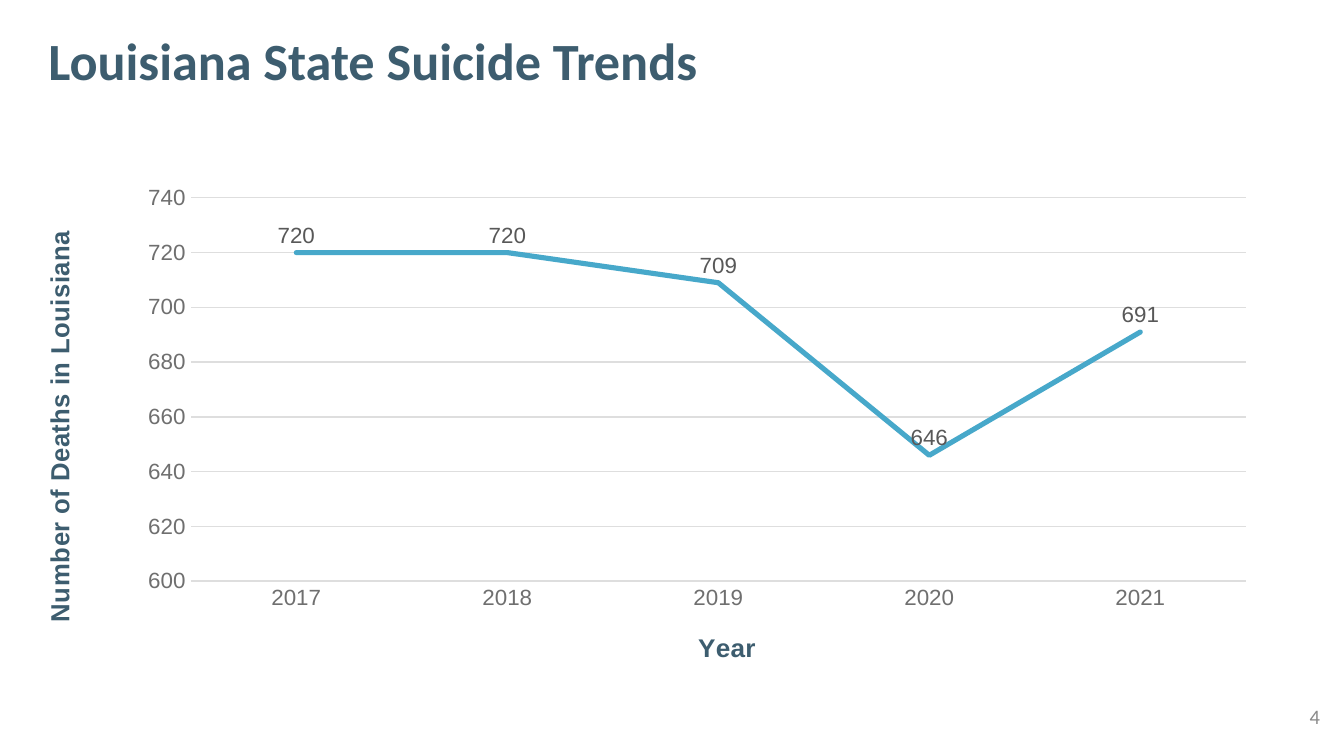
from dataclasses import dataclass

from lxml import etree
from pptx import Presentation, util as u
from pptx.chart.data import CategoryChartData
from pptx.dml.color import RGBColor
from pptx.enum import chart as ch, text as t
from pptx.oxml.ns import qn


@dataclass(frozen=True)
class Theme:
    heading: str = "3D5D6F"
    line: str = "47A8CA"
    axis: str = "6F6F6F"
    label: str = "585858"
    grid: str = "DEDEDE"
    number: str = "8A8A8A"
    base: str = "212121"
    title_font: str = "Calibri"
    chart_font: str = "Arial"
    title_size: float = 28
    axis_title_size: float = 14
    chart_size: float = 12
    base_size: float = 10
    number_size: float = 11


THEME = Theme()
DEATHS = {"2017": 720, "2018": 720, "2019": 709, "2020": 646, "2021": 691}


def assign(target, values):
    for name, value in values.items():
        setattr(target, name, value)


def style_font(font, name, size, color, bold=False):
    assign(font, {"name": name, "size": u.Pt(size), "bold": bold})
    font.color.rgb = RGBColor.from_string(color)


def style_line(line, color, width):
    line.color.rgb = RGBColor.from_string(color)
    line.width = u.Pt(width)


def set_layout(parent, position, box, **modes):
    """Lay out a chart part at x, y (and w, h) given in inches within the chart box."""
    for old in parent.findall(qn("c:layout")):
        parent.remove(old)
    layout = etree.Element(qn("c:layout"))
    manual = etree.SubElement(layout, qn("c:manualLayout"))
    parts, (width, height) = modes.pop("inches"), box[2:]
    fractions = {tag: length / whole for tag, length, whole
                 in zip("xywh", parts, (width, height) * 2)}
    for tag, value in {**modes, "xMode": "edge", "yMode": "edge", **fractions}.items():
        etree.SubElement(manual, qn(f"c:{tag}")).set("val", str(value))
    parent.insert(position, layout)


def place(shape, box):
    sides = ("left", "top", "width", "height")
    assign(shape, {side: u.Inches(length) for side, length in zip(sides, box)})


def add_title(slide, box, words):
    title = slide.shapes.title
    place(title, box)
    frame = title.text_frame
    assign(frame, {
        "text": words, "word_wrap": True,
        "auto_size": t.MSO_AUTO_SIZE.NONE,
        "vertical_anchor": t.MSO_ANCHOR.MIDDLE,
        "margin_left": u.Inches(0.36), "margin_right": u.Inches(0.1),
        "margin_top": u.Inches(0.1), "margin_bottom": u.Inches(0.1),
    })
    paragraph = frame.paragraphs[0]
    assign(paragraph, {"alignment": t.PP_ALIGN.LEFT, "line_spacing": 0.9})
    style_font(paragraph.runs[0].font, THEME.title_font, THEME.title_size,
               THEME.heading, True)


def style_axis(axis, words, box, title_corner):
    assign(axis, {"major_tick_mark": ch.XL_TICK_MARK.NONE,
                  "minor_tick_mark": ch.XL_TICK_MARK.NONE})
    style_font(axis.tick_labels.font, THEME.chart_font, THEME.chart_size, THEME.axis)
    title = axis.axis_title
    title.text_frame.text = words
    style_font(title.text_frame.paragraphs[0].runs[0].font, THEME.chart_font,
               THEME.axis_title_size, THEME.heading, True)
    set_layout(title._element, 1, box, inches=title_corner)


def add_trend_chart(slide, box):
    data = CategoryChartData()
    data.categories = list(DEATHS)
    data.add_series("Series 1", list(DEATHS.values()))
    chart = slide.shapes.add_chart(ch.XL_CHART_TYPE.LINE, *map(u.Inches, box), data).chart
    assign(chart, {"has_legend": False, "has_title": False})
    style_font(chart.font, THEME.chart_font, THEME.base_size, THEME.base)
    set_layout(chart._chartSpace.chart.plotArea, 0, box, layoutTarget="inner",
               inches=(1.15, 0.4, 7.85, 2.91))

    years, deaths = chart.category_axis, chart.value_axis
    style_axis(years, "Year", box, (4.89, 3.65))
    style_line(years.format.line, THEME.grid, 1)
    style_axis(deaths, "Number of Deaths in Louisiana", box, (0.01, 0.67))
    deaths.format.line.fill.background()
    assign(deaths, {"minimum_scale": 600, "maximum_scale": 740, "major_unit": 20,
                    "has_major_gridlines": True})
    style_line(deaths.major_gridlines.format.line, THEME.grid, 0.75)

    plot = chart.plots[0]
    plot.vary_by_categories = False
    trend = plot.series[0]
    trend.smooth = False
    trend.marker.style = ch.XL_MARKER_STYLE.NONE
    style_line(trend.format.line, THEME.line, 2.75)
    trend._element.find(f"{qn('c:spPr')}/{qn('a:ln')}").set("cap", "rnd")
    labels = trend.data_labels
    assign(labels, {"show_value": True, "position": ch.XL_LABEL_POSITION.ABOVE})
    style_font(labels.font, THEME.chart_font, THEME.chart_size, THEME.label)


def add_page_number(slide, box, number):
    frame = slide.shapes.add_textbox(*map(u.Inches, box)).text_frame
    assign(frame, {"text": str(number), "word_wrap": True,
                   "vertical_anchor": t.MSO_ANCHOR.MIDDLE})
    paragraph = frame.paragraphs[0]
    paragraph.alignment = t.PP_ALIGN.RIGHT
    style_font(paragraph.runs[0].font, THEME.title_font, THEME.number_size, THEME.number)


def main():
    deck = Presentation()
    width = u.Inches(10)
    assign(deck, {"slide_width": width, "slide_height": width * 9 // 16})
    slide = deck.slides.add_slide(deck.slide_layouts.get_by_name("Title Only"))
    add_title(slide, (0, 0, 10, 0.94), "Louisiana State Suicide Trends")
    add_trend_chart(slide, (0.27, 1.08, 9.51, 3.91))
    add_page_number(slide, (8.31, 5.14, 1.61, 0.38), 4)
    deck.save("out.pptx")


if __name__ == "__main__":
    main()
